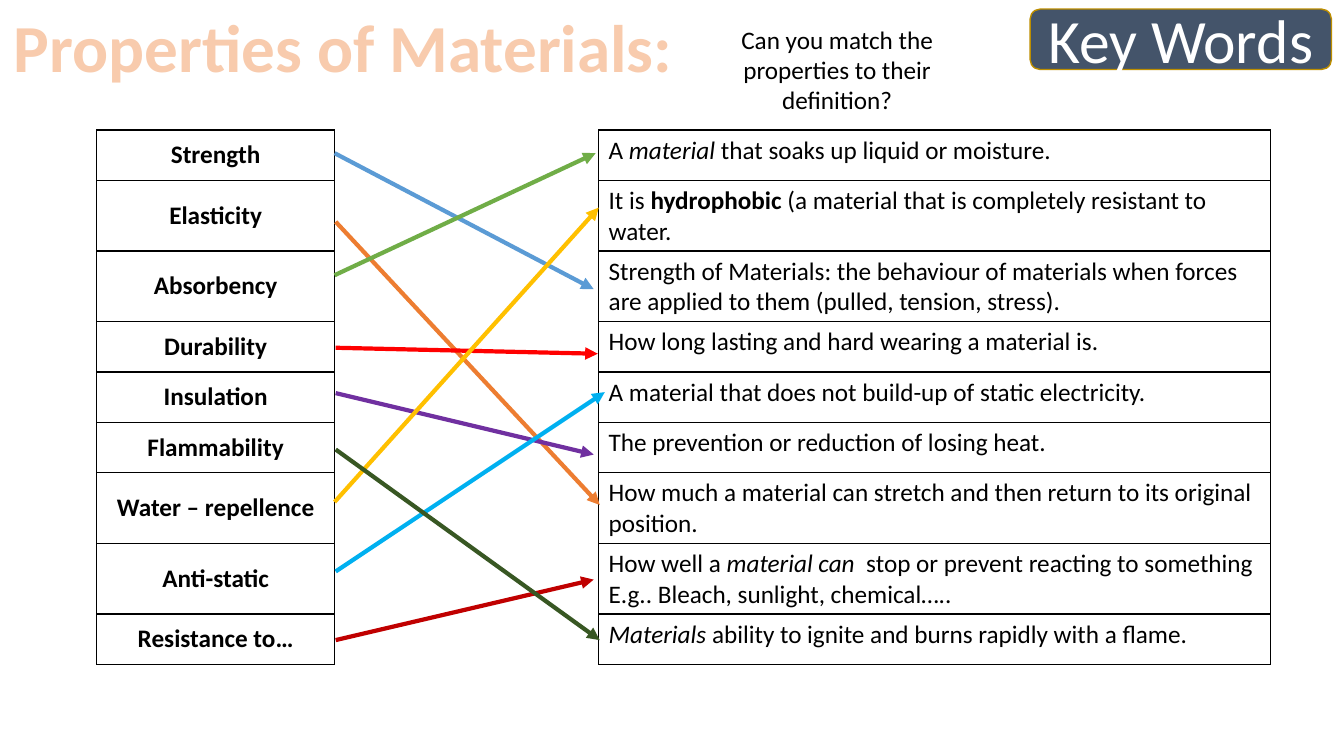
from dataclasses import dataclass

from lxml.etree import SubElement
from pptx import Presentation
from pptx.dml.color import RGBColor
from pptx.enum.shapes import MSO_CONNECTOR, MSO_SHAPE
from pptx.enum.text import MSO_ANCHOR, MSO_AUTO_SIZE, PP_ALIGN
from pptx.oxml import parse_xml
from pptx.oxml.ns import nsdecls, qn
from pptx.util import Pt


@dataclass(frozen=True)
class Theme:
    font: str = "Calibri"
    body_size: float = 18
    badge_size: float = 44
    title_size: float = 48
    text: str = "000000"
    border: str = "000000"
    badge_fill: str = "44546A"
    badge_line: str = "BD8E00"
    badge_text: str = "FFFFFF"
    title: str = "F8CBAD"
    title_outline: str = "ED7D31"


@dataclass(frozen=True)
class Run:
    text: str
    bold: bool = False
    italic: bool = False


@dataclass(frozen=True)
class Row:
    keyword: str
    definition: tuple[Run, ...]


@dataclass(frozen=True)
class Arrow:
    start: tuple[float, float]
    end: tuple[float, float]
    color: str


@dataclass(frozen=True)
class Box:
    left: float
    top: float
    width: float
    height: float

    def lengths(self):
        return Pt(self.left), Pt(self.top), Pt(self.width), Pt(self.height)


THEME = Theme()
TITLE_BOX = Box(0, 0, 490.3, 65.5)
QUESTION_BOX = Box(490.3, 13.7, 215.3, 72.7)
BADGE_BOX = Box(735.8, 6.5, 215.3, 43.2)
TABLE_BOX = Box(69.1, 92.9, 838.8, 324)
COLUMN_WIDTHS = (169.9, 188.6, 480.2)

ROWS = (
    Row("Strength", (Run("A "), Run("material", italic=True),
                     Run(" that soaks up liquid or moisture."))),
    Row("Elasticity", (Run("It is "), Run("hydrophobic", bold=True),
                       Run(" (a material that is completely resistant to water."))),
    Row("Absorbency", (Run("Strength of Materials: the behaviour of materials when forces "
                           "are applied to them (pulled, tension, stress)."),)),
    Row("Durability", (Run("How long lasting and hard wearing a material is."),)),
    Row("Insulation", (Run("A material that does not build-up of static electricity."),)),
    Row("Flammability", (Run("The prevention or reduction of losing heat."),)),
    Row("Water – repellence", (Run("How much a material can stretch and then return "
                                   "to its original position."),)),
    Row("Anti-static", (Run("How well a "), Run("material can ", italic=True),
                        Run(" stop or prevent reacting to something "
                            "E.g.. Bleach, sunlight, chemical….."))),
    Row("Resistance to…", (Run("Materials", italic=True),
                           Run(" ability to ignite and burns rapidly with a flame."))),
)

ARROWS = (
    Arrow((239, 109.4), (424.1, 206.6), "5B9BD5"),
    Arrow((239.8, 158.4), (428.4, 360.7), "ED7D31"),
    Arrow((239, 196.6), (425.5, 109.4), "70AD47"),
    Arrow((239.8, 248.4), (427, 252.7), "FF0000"),
    Arrow((239.8, 457.2), (424.1, 414), "C00000"),
    Arrow((239.8, 280.8), (424.1, 324.7), "7030A0"),
    Arrow((239, 358.6), (427.7, 148.3), "FFC000"),
    Arrow((239.8, 408.2), (432, 280.1), "00B0F0"),
    Arrow((239.8, 321.1), (428.4, 457.2), "385723"),
)


def write(paragraph, runs: tuple[Run, ...], size: float, color: str,
          alignment=PP_ALIGN.CENTER) -> None:
    paragraph.alignment = alignment
    for item in runs:
        run = paragraph.add_run()
        run.text = item.text
        font = run.font
        font.name = THEME.font
        font.size = Pt(size)
        font.bold = item.bold
        font.italic = item.italic
        font.color.rgb = RGBColor.from_string(color)


def add_badge(slide) -> None:
    badge = slide.shapes.add_shape(MSO_SHAPE.ROUNDED_RECTANGLE, *BADGE_BOX.lengths())
    badge.shadow.inherit = False
    badge.fill.solid()
    badge.fill.fore_color.rgb = RGBColor.from_string(THEME.badge_fill)
    badge.line.color.rgb = RGBColor.from_string(THEME.badge_line)
    badge.line.width = Pt(1)
    frame = badge.text_frame
    frame.vertical_anchor = MSO_ANCHOR.MIDDLE
    write(frame.paragraphs[0], (Run("Key Words"),), THEME.badge_size, THEME.badge_text)


def add_text(slide, box: Box, run: Run, size: float, color: str, wrap: bool):
    frame = slide.shapes.add_textbox(*box.lengths()).text_frame
    frame.word_wrap = wrap
    frame.auto_size = MSO_AUTO_SIZE.SHAPE_TO_FIT_TEXT
    paragraph = frame.paragraphs[0]
    write(paragraph, (run,), size, color)
    return paragraph


def outline_text(paragraph, color: str, width: float) -> None:
    properties = paragraph.runs[0].font._element
    properties.insert(0, parse_xml(
        f'<a:ln {nsdecls("a")} w="{Pt(width)}"><a:solidFill>'
        f'<a:srgbClr val="{color}"/></a:solidFill></a:ln>'))


def set_borders(cell, sides: str) -> None:
    properties = cell._tc.get_or_add_tcPr()
    for index, side in enumerate("LRTB"):
        fill = (f'<a:solidFill><a:srgbClr val="{THEME.border}"/></a:solidFill>'
                if side in sides else "<a:noFill/>")
        properties.insert(index, parse_xml(
            f'<a:ln{side} {nsdecls("a")} w="{Pt(1)}">{fill}</a:ln{side}>'))


def add_matching_table(slide) -> None:
    table = slide.shapes.add_table(len(ROWS), len(COLUMN_WIDTHS), *TABLE_BOX.lengths()).table
    table.first_row = False
    table.horz_banding = False
    for column, width in zip(table.columns, COLUMN_WIDTHS):
        column.width = Pt(width)
    for table_row, row in zip(table.rows, ROWS):
        table_row.height = Pt(TABLE_BOX.height / len(ROWS))
        keyword, gap, definition = table_row.cells
        for cell, sides in ((keyword, "LRTB"), (gap, "LR"), (definition, "LRTB")):
            cell.fill.background()
            set_borders(cell, sides)
        keyword.vertical_anchor = MSO_ANCHOR.MIDDLE
        write(keyword.text_frame.paragraphs[0], (Run(row.keyword, bold=True),),
              THEME.body_size, THEME.text)
        write(definition.text_frame.paragraphs[0], row.definition,
              THEME.body_size, THEME.text, PP_ALIGN.LEFT)


def add_arrow(slide, arrow: Arrow) -> None:
    connector = slide.shapes.add_connector(
        MSO_CONNECTOR.STRAIGHT, *(Pt(value) for value in arrow.start + arrow.end))
    connector.line.color.rgb = RGBColor.from_string(arrow.color)
    connector.line.width = Pt(3)
    SubElement(connector.line._get_or_add_ln(), qn("a:tailEnd"), type="triangle")
    SubElement(connector._element.spPr, qn("a:effectLst"))


def main() -> None:
    presentation = Presentation()
    presentation.slide_width, presentation.slide_height = Pt(960), Pt(540)
    slide = presentation.slides.add_slide(presentation.slide_layouts[6])
    add_badge(slide)
    title = add_text(slide, TITLE_BOX, Run("Properties of Materials:", bold=True),
                     THEME.title_size, THEME.title, wrap=False)
    outline_text(title, THEME.title_outline, 1.75)
    add_matching_table(slide)
    for arrow in ARROWS:
        add_arrow(slide, arrow)
    add_text(slide, QUESTION_BOX, Run("Can you match the properties to their definition?"),
             THEME.body_size, THEME.text, wrap=True)
    presentation.save("out.pptx")


if __name__ == "__main__":
    main()
